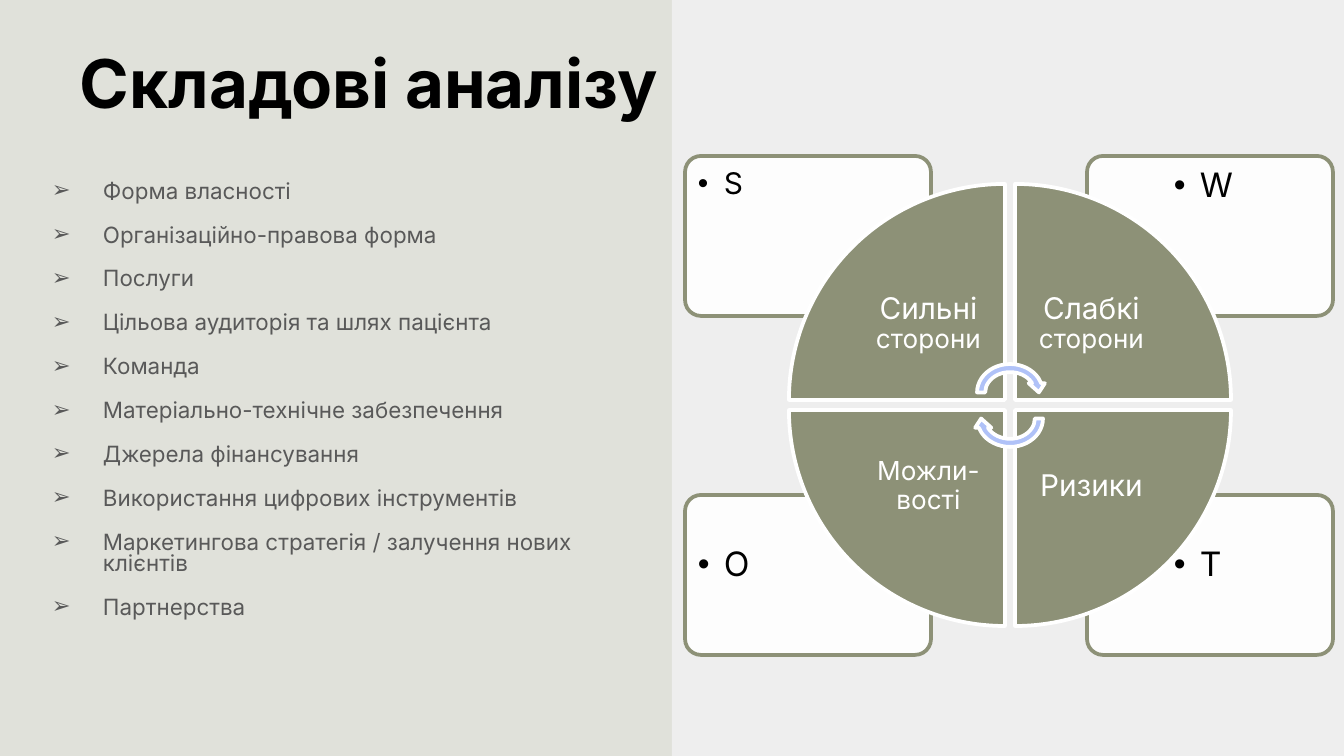
from lxml import etree
from pptx import Presentation
from pptx.dml.color import RGBColor
from pptx.enum.shapes import MSO_SHAPE
from pptx.enum.text import MSO_ANCHOR, PP_ALIGN
from pptx.oxml.ns import qn
from pptx.util import Emu, Pt

RECT = MSO_SHAPE.RECTANGLE
ROUND = MSO_SHAPE.ROUNDED_RECTANGLE
WEDGE = MSO_SHAPE.PIE_WEDGE
ARC = MSO_SHAPE.CIRCULAR_ARROW
TOP, MIDDLE = MSO_ANCHOR.TOP, MSO_ANCHOR.MIDDLE
LEFT, CENTER = PP_ALIGN.LEFT, PP_ALIGN.CENTER

WIDE, HIGH = 1344, 756
SCALE = 9144000 / WIDE
FONT = "Inter"
OLIVE, WHITE, BLACK, GRAY = "8D9177", "FFFFFF", "000000", "595959"
SAND, PALE, BLUE = "E0E1DA", "EEEEEE", "B0C2F8"

TOPICS = [
    "Форма власності",
    "Організаційно-правова форма",
    "Послуги",
    "Цільова аудиторія та шлях пацієнта",
    "Команда",
    "Матеріально-технічне забезпечення",
    "Джерела фінансування",
    "Використання цифрових інструментів",
    "Маркетингова стратегія / залучення нових клієнтів",
    "Партнерства",
]
CARDS = [("T", 18, 1, 1), ("O", 18, 0, 1), ("W", 18, 1, 0), ("S", 16, 0, 0)]
PARTS = [
    ([("Сильні ", 16), ("сторони", 14)], 0, 0, 0),
    ([("Слабкі ", 16), ("сторони", 14)], 1, 0, 90),
    ([("Ризики", 16)], 1, 1, 180),
    ([("Можли-вості", 14)], 0, 1, 270),
]


def px(size):
    """Turn px into EMU."""
    return Emu(round(size * SCALE))


def paint(color, tone):
    """Set a colour format from a hex string."""
    color.rgb = RGBColor.from_string(tone)


def draw(shapes, kind, box, fill, line=None, turn=0):
    """Add a preset shape with a flat fill and an optional outline."""
    shape = shapes.add_shape(kind, *map(px, box))
    shape.shadow.inherit = False
    shape.rotation = turn
    shape.fill.solid()
    paint(shape.fill.fore_color, fill)
    if line:
        paint(shape.line.color, line)
        shape.line.width = Pt(2)
    else:
        shape.line.fill.background()
    return shape


def fade(shape, share):
    """Make a solid fill partly opaque, with share in percent."""
    tone = shape.fill._xPr.find(qn("a:solidFill"))[0]
    etree.SubElement(tone, qn("a:alpha"), val=str(share * 1000))


def mark(para, sign, tone, indent):
    """Give a paragraph a bullet and a hanging indent."""
    props = para._p.get_or_add_pPr()
    props.set("marL", str(px(indent)))
    props.set("indent", str(-px(indent)))
    color = etree.SubElement(props, qn("a:buClr"))
    etree.SubElement(color, qn("a:srgbClr"), val=tone)
    etree.SubElement(props, qn("a:buFont"), typeface="Arial")
    etree.SubElement(props, qn("a:buChar"), char=sign)


def write(shapes, box, rows, tone, inset=13, anchor=TOP, align=LEFT,
          space=1.0, after=0, bold=False, bullet=None):
    """Add a text box; each row is a list of (text, size) runs."""
    frame = shapes.add_textbox(*map(px, box)).text_frame
    frame.word_wrap = True
    frame.vertical_anchor = anchor
    frame.margin_left = frame.margin_right = px(inset)
    frame.margin_top = frame.margin_bottom = px(inset)
    for i, row in enumerate(rows):
        para = frame.add_paragraph() if i else frame.paragraphs[0]
        if bullet:
            mark(para, bullet[0], tone, bullet[1])
        para.alignment = align
        para.line_spacing = space
        para.space_after = Pt(after)
        for text, size in row:
            run = para.add_run()
            run.text = text
            run.font.name = FONT
            run.font.size = Pt(size)
            run.font.bold = bold
            paint(run.font.color, tone)


def add_list(shapes, box):
    """Place the title and the list of topics."""
    x, y, w, h = box
    write(shapes, (x + 67, y + 28, 810, 109), [[("Складові аналізу", 36)]],
          BLACK, bold=True)
    write(shapes, (x + 39, y + 169, w - 78, 425),
          [[(topic, 12)] for topic in TOPICS], GRAY,
          space=0.8, after=12, bullet=("➢", 51))


def add_cards(shapes, box):
    """Place the four letter cards in the corners of the box."""
    x, y, w, h = box
    wide, high = 246, 160
    for text, size, col, row in CARDS:
        left, top = x + col * (w - wide), y + row * (h - high)
        card = draw(shapes, ROUND, (left, top, wide, high), WHITE, OLIVE)
        card.adjustments[0] = 0.1
        fade(card, 90)
        spot = (left + (78 if col else 4), top + (44 if row else 4), 165, 113)
        write(shapes, spot, [[(text, size)]], BLACK, inset=9, space=0.9,
              bullet=("•", 26))


def add_wheel(shapes, box):
    """Place the four wedges, their labels and the two turning arrows."""
    x, y, w, h = box
    side, text, gap = 216, 153, 10
    for runs, col, row, turn in PARTS:
        left, top = x + col * (side + gap), y + row * (side + gap)
        draw(shapes, WEDGE, (left, top, side, side), OLIVE, WHITE, turn)
        spot = (left + (1 - col) * (side - text),
                top + (1 - row) * (side - text), text, text)
        write(shapes, spot, [runs], WHITE, inset=16, anchor=MIDDLE,
              align=CENTER, space=0.9)
    for top, turn in ((176, 0), (202, 180)):
        draw(shapes, ARC, (x + (w - 74) // 2, y + top, 74, 65), BLUE, WHITE,
             turn)


def main():
    """Build the slide and save it."""
    deck = Presentation()
    deck.slide_width, deck.slide_height = px(WIDE), px(HIGH)
    slide = deck.slides.add_slide(deck.slide_layouts[6])
    back = slide.background.fill
    back.solid()
    paint(back.fore_color, SAND)
    half = WIDE // 2
    draw(slide.shapes, RECT, (half, 0, half, HIGH), PALE)
    add_list(slide.shapes, (0, 0, half, HIGH))
    group = slide.shapes.add_group_shape().shapes
    add_cards(group, (685, 156, 648, 499))
    add_wheel(group, (789, 184, 442, 442))
    deck.save("out.pptx")


if __name__ == "__main__":
    main()
